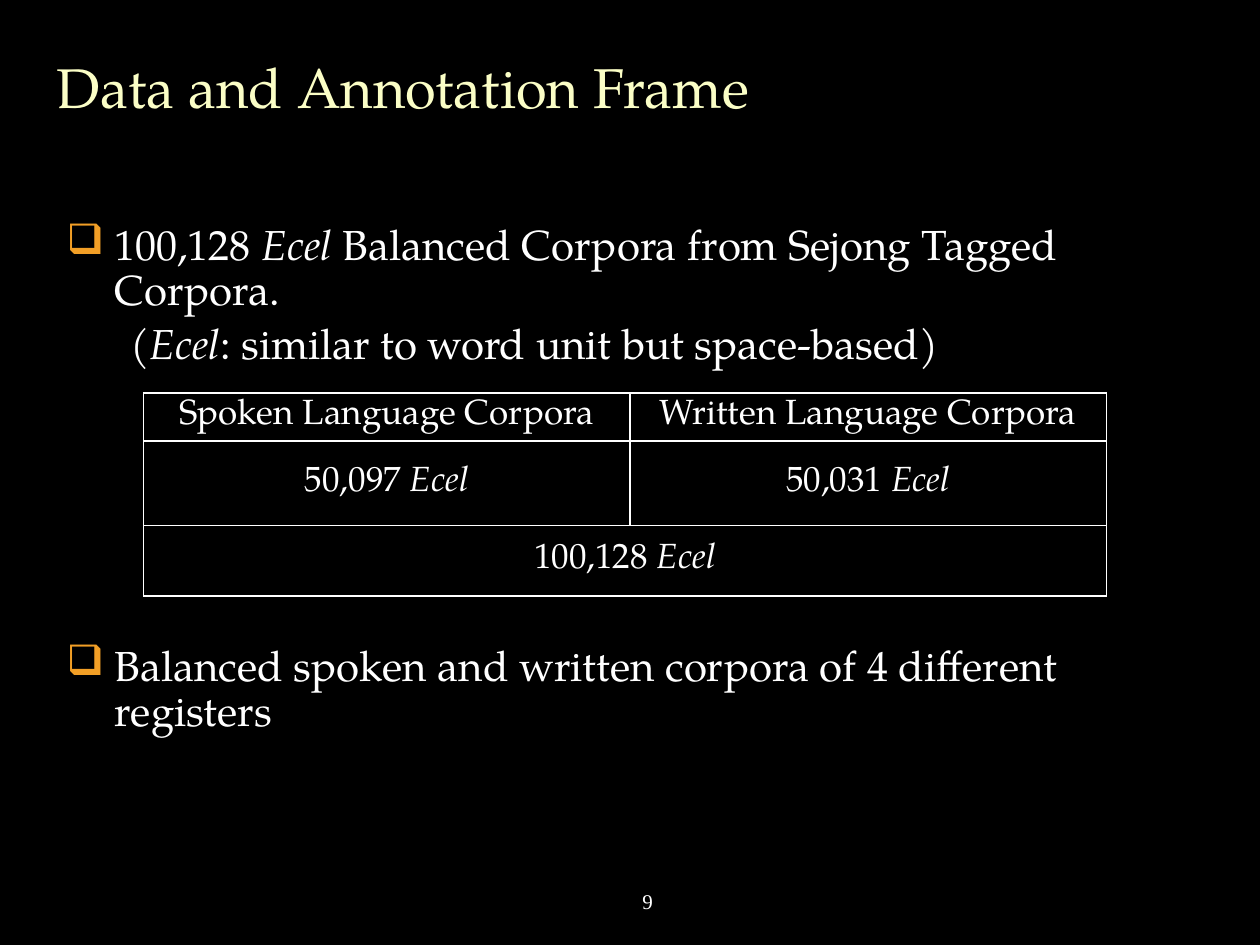
"""Build the slide on corpus data and its annotation frame."""
from typing import NamedTuple

from lxml.etree import SubElement
from pptx import Presentation
from pptx.dml.color import RGBColor as Rgb
from pptx.enum.text import MSO_ANCHOR as Anchor, MSO_AUTO_SIZE as Fit, PP_ALIGN as Align
from pptx.oxml.ns import qn
from pptx.util import Inches, Pt

HUES = {"back": "000000", "title": "FBFEC6", "text": "FFFFFF", "mark": "F29F26"}
SERIF = "TeX Gyre Pagella"
TIMES = "Times New Roman"


class Span(NamedTuple):
    text: str
    slant: bool = False


class Item(NamedTuple):
    spans: list[Span]
    left: float = 0.38
    mark: str = ""
    gap: float = 0


class Cell(NamedTuple):
    row: int
    col: int
    spans: list[Span]


ECEL = Span("Ecel", True)
ITEMS = [
    Item([Span("100,128 "), Span("Ecel ", True),
          Span("Balanced Corpora from Sejong Tagged Corpora.")], mark="❑"),
    Item([Span("(Ecel", True), Span(": similar to word unit but space-based)")],
         left=0.51, gap=4.8),
    Item([Span("Balanced spoken and written corpora of 4 different registers")],
         mark="❑", gap=158),
]
CELLS = [
    Cell(0, 0, [Span("Spoken Language Corpora")]),
    Cell(0, 1, [Span("Written Language Corpora")]),
    Cell(1, 0, [Span("50,097 "), ECEL]),
    Cell(1, 1, [Span("50,031 "), ECEL]),
    Cell(2, 0, [Span("100,128 "), ECEL]),
]
COLS = [3.86, 3.78]
ROWS = [0.38, 0.67, 0.56]


def style(para, size: float, hue: str = "text", face: str = SERIF) -> None:
    """Set the font of a whole paragraph."""
    font = para.font
    font.size, font.name = Pt(size), face
    font.color.rgb = Rgb.from_string(HUES[hue])


def write(para, spans: list[Span]) -> None:
    """Add the spans to a paragraph as runs."""
    for span in spans:
        run = para.add_run()
        run.text = span.text
        if span.slant:
            run.font.italic = True


def add_box(slide, left: float, top: float, width: float, height: float):
    """Add a wrapping text box and return its frame."""
    box = slide.shapes.add_textbox(*map(Inches, (left, top, width, height)))
    box.text_frame.word_wrap = True
    return box.text_frame


def add_mark(para, mark: str) -> None:
    """Give a paragraph a hanging, coloured bullet."""
    props = para._p.get_or_add_pPr()
    props.set("indent", str(Inches(-0.38)))
    tint = SubElement(props, qn("a:buClr"))
    SubElement(tint, qn("a:srgbClr"), val=HUES["mark"])
    SubElement(props, qn("a:buChar"), char=mark)


def add_title(slide, text: str) -> None:
    """Place and format the title."""
    title = slide.shapes.title
    title.left, title.top, title.width, title.height = map(Inches, (0.35, 0.21, 8.14, 0.94))
    frame = title.text_frame
    frame.text = text
    frame.auto_size = Fit.NONE
    frame.vertical_anchor = Anchor.MIDDLE
    para = frame.paragraphs[0]
    para.alignment = Align.LEFT
    style(para, 32, "title")


def add_list(slide, items: list[Item]) -> None:
    """Draw the body paragraphs."""
    frame = add_box(slide, 0.43, 1.73, 8.9, 5.25)
    for num, item in enumerate(items):
        para = frame.add_paragraph() if num else frame.paragraphs[0]
        para._p.get_or_add_pPr().set("marL", str(Inches(item.left)))
        para.line_spacing = 0.9
        if item.gap:
            para.space_before = Pt(item.gap)
        if item.mark:
            add_mark(para, item.mark)
        style(para, 24)
        write(para, item.spans)


def add_rules(cell) -> None:
    """Draw a thin line on each side of a cell."""
    props = cell._tc.get_or_add_tcPr()
    for side in "LRTB":
        line = SubElement(props, qn(f"a:ln{side}"), w=str(Pt(1)))
        fill = SubElement(line, qn("a:solidFill"))
        SubElement(fill, qn("a:srgbClr"), val=HUES["text"])


def add_grid(slide, cells: list[Cell]) -> None:
    """Draw the table of corpus sizes."""
    spot = map(Inches, (1.14, 3.12, sum(COLS), sum(ROWS)))
    grid = slide.shapes.add_table(len(ROWS), len(COLS), *spot).table
    grid.first_row = grid.horz_banding = False
    for col, width in zip(grid.columns, COLS):
        col.width = Inches(width)
    for row, height in zip(grid.rows, ROWS):
        row.height = Inches(height)
    grid.cell(2, 0).merge(grid.cell(2, 1))
    for cell in grid.iter_cells():
        add_rules(cell)
        cell.fill.background()
        cell.margin_top = cell.margin_bottom = Inches(0.02)
        cell.vertical_anchor = Anchor.MIDDLE
    for data in cells:
        para = grid.cell(data.row, data.col).text_frame.paragraphs[0]
        para.alignment = Align.CENTER
        style(para, 20)
        write(para, data.spans)


def add_page(slide, text: str) -> None:
    """Write the page number."""
    frame = add_box(slide, 4.53, 6.95, 1.22, 0.4)
    frame.vertical_anchor = Anchor.MIDDLE
    para = frame.paragraphs[0]
    para.alignment = Align.CENTER
    style(para, 12, face=TIMES)
    write(para, [Span(text)])


def main() -> None:
    """Build and save the deck."""
    deck = Presentation()
    deck.slide_width, deck.slide_height = Inches(10), Inches(7.5)
    slide = deck.slides.add_slide(deck.slide_layouts[5])
    back = slide.background.fill
    back.solid()
    back.fore_color.rgb = Rgb.from_string(HUES["back"])
    add_title(slide, "Data and Annotation Frame")
    add_list(slide, ITEMS)
    add_grid(slide, CELLS)
    add_page(slide, "9")
    deck.save("out.pptx")


if __name__ == "__main__":
    main()
